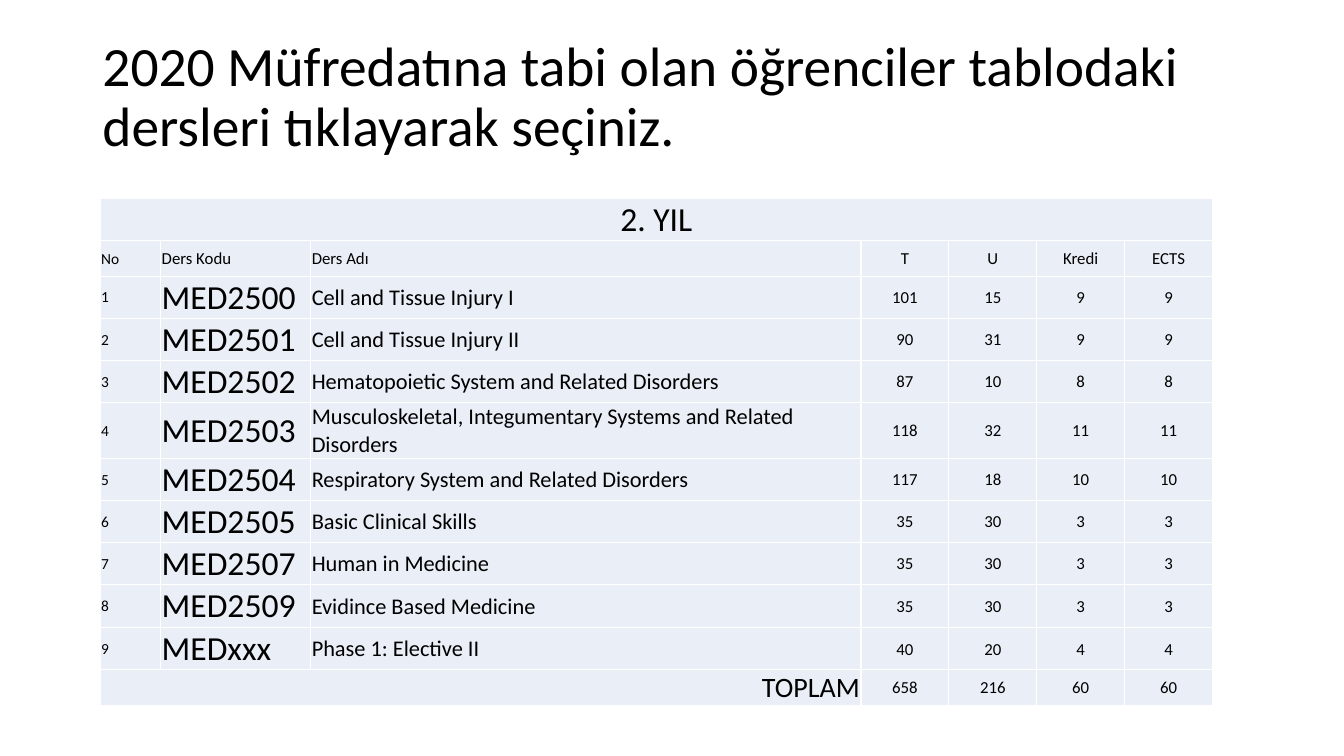
from pptx import Presentation
from pptx.dml.color import RGBColor
from pptx.enum.text import MSO_ANCHOR as Anchor, MSO_AUTO_SIZE as AutoSize, PP_ALIGN as Align
from pptx.oxml import parse_xml
from pptx.oxml.ns import nsdecls
from pptx.util import Pt

COLORS = {"text": "000000", "cell": "EAEFF7", "border": "FFFFFF"}
FONT = "Calibri"
TITLE = "2020 Müfredatına tabi olan öğrenciler tablodaki dersleri tıklayarak seçiniz."
HEADERS = ["No", "Ders Kodu", "Ders Adı", "T", "U", "Kredi", "ECTS"]
COURSES = [
    ("MED2500", "Cell and Tissue Injury I", 101, 15, 9, 9),
    ("MED2501", "Cell and Tissue Injury II", 90, 31, 9, 9),
    ("MED2502", "Hematopoietic System and Related Disorders", 87, 10, 8, 8),
    ("MED2503", "Musculoskeletal, Integumentary Systems and Related Disorders", 118, 32, 11, 11),
    ("MED2504", "Respiratory System and Related Disorders", 117, 18, 10, 10),
    ("MED2505", "Basic Clinical Skills", 35, 30, 3, 3),
    ("MED2507", "Human in Medicine", 35, 30, 3, 3),
    ("MED2509", "Evidince Based Medicine", 35, 30, 3, 3),
    ("MEDxxx", "Phase 1: Elective II", 40, 20, 4, 4),
]
TOTALS = ["TOPLAM", "", "", 658, 216, 60, 60]
COLUMN_WIDTHS = [43.3, 107.2, 393] + [62.8] * 4
ROW_HEIGHT, TALL_ROW_HEIGHT = 25.2, 31
TALL_ROWS = (5, 9)
HEADER_SIZES = [11] + [12] * 6
COURSE_SIZES = [11, 24, 16] + [12] * 4
TOTAL_SIZES = [20] * 3 + [12] * 4
COURSE_ALIGNS = [Align.LEFT] * 3 + [Align.CENTER] * 4
TOTAL_ALIGNS = [Align.RIGHT] * 3 + [Align.CENTER] * 4


def add_text(paragraph, text, size, align):
    paragraph.alignment = align
    run = paragraph.add_run()
    run.text = str(text)
    run.font.name = FONT
    run.font.size = Pt(size)
    run.font.color.rgb = RGBColor.from_string(COLORS["text"])


def add_title(slide):
    title = slide.shapes.title
    title.left, title.top, title.width, title.height = Pt(66), Pt(28.8), Pt(828), Pt(82.8)
    frame = title.text_frame
    frame.word_wrap = True
    frame.auto_size = AutoSize.NONE
    frame.vertical_anchor = Anchor.MIDDLE
    paragraph = frame.paragraphs[0]
    paragraph.line_spacing = 0.9
    add_text(paragraph, TITLE, 39.6, Align.LEFT)


def format_cell(cell):
    cell.margin_left = cell.margin_right = cell.margin_top = Pt(0.75)
    cell.margin_bottom = Pt(0)
    cell.vertical_anchor = Anchor.MIDDLE
    properties = cell._tc.get_or_add_tcPr()
    for side in ("lnL", "lnR", "lnT", "lnB"):
        properties.append(parse_xml(
            f'<a:{side} {nsdecls("a")} w="{Pt(1)}"><a:solidFill>'
            f'<a:srgbClr val="{COLORS["border"]}"/></a:solidFill></a:{side}>'))
    cell.fill.solid()
    cell.fill.fore_color.rgb = RGBColor.from_string(COLORS["cell"])


def fill_row(table, row, values, sizes, aligns):
    for column, (value, size, align) in enumerate(zip(values, sizes, aligns)):
        cell = table.cell(row, column)
        format_cell(cell)
        if value != "":
            add_text(cell.text_frame.paragraphs[0], value, size, align)


def add_course_table(slide):
    row_count = len(COURSES) + 3
    heights = [TALL_ROW_HEIGHT if row in TALL_ROWS else ROW_HEIGHT for row in range(row_count)]
    table = slide.shapes.add_table(
        row_count, len(HEADERS), Pt(71.5), Pt(142),
        Pt(sum(COLUMN_WIDTHS)), Pt(sum(heights))).table
    table.first_row = table.horz_banding = False
    for column, width in zip(table.columns, COLUMN_WIDTHS):
        column.width = Pt(width)
    for row, height in zip(table.rows, heights):
        row.height = Pt(height)

    last = row_count - 1
    fill_row(table, 0, ["2. YIL"] + [""] * 6, [24] * 7, [Align.CENTER] * 7)
    fill_row(table, 1, HEADERS, HEADER_SIZES, COURSE_ALIGNS)
    for number, course in enumerate(COURSES, 1):
        fill_row(table, number + 1, (number, *course), COURSE_SIZES, COURSE_ALIGNS)
    fill_row(table, last, TOTALS, TOTAL_SIZES, TOTAL_ALIGNS)
    table.cell(0, 0).merge(table.cell(0, 6))
    table.cell(last, 0).merge(table.cell(last, 2))


def main():
    presentation = Presentation()
    presentation.slide_width, presentation.slide_height = Pt(960), Pt(540)
    slide = presentation.slides.add_slide(presentation.slide_layouts[5])
    add_title(slide)
    add_course_table(slide)
    presentation.save("out.pptx")


if __name__ == "__main__":
    main()
